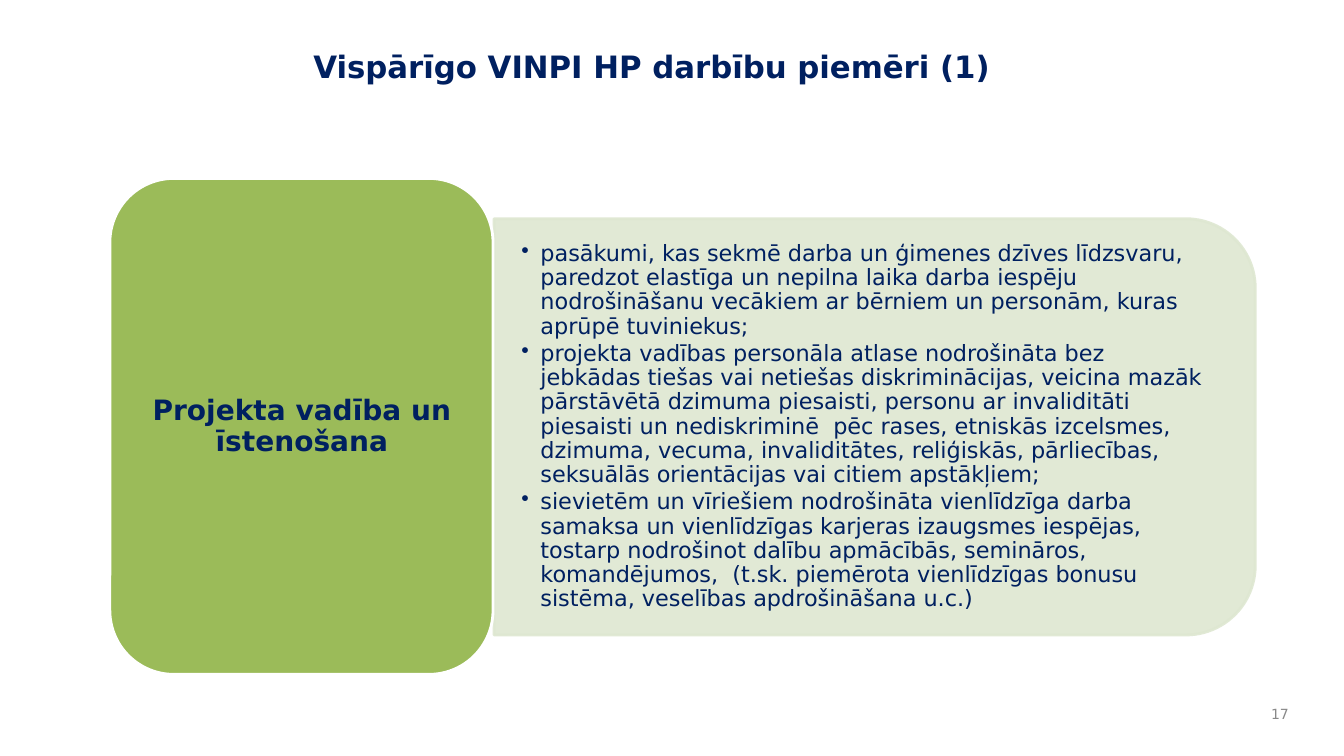
from pptx import Presentation
from pptx.dml.color import RGBColor
from pptx.enum.shapes import MSO_SHAPE
from pptx.enum.text import MSO_ANCHOR, PP_ALIGN
from pptx.oxml.ns import qn
from pptx.util import Inches, Pt
from lxml import etree

NAVY = RGBColor(0x00, 0x20, 0x60)
GREEN = RGBColor(0x9B, 0xBB, 0x59)
PALE = RGBColor(0xDE, 0xE7, 0xD1)
WHITE = RGBColor(0xFF, 0xFF, 0xFF)
GREY = RGBColor(0x89, 0x89, 0x89)

POINTS = [
    "pasākumi, kas sekmē darba un ģimenes dzīves līdzsvaru, paredzot elastīga "
    "un nepilna laika darba iespēju nodrošināšanu vecākiem ar bērniem un "
    "personām, kuras aprūpē tuviniekus;",
    "projekta vadības personāla atlase nodrošināta bez jebkādas tiešas vai "
    "netiešas diskriminācijas, veicina mazāk pārstāvētā dzimuma piesaisti, "
    "personu ar invaliditāti piesaisti un nediskriminē  pēc rases, etniskās "
    "izcelsmes, dzimuma, vecuma, invaliditātes, reliģiskās, pārliecības,  "
    "seksuālās orientācijas vai citiem apstākļiem;",
    "sievietēm un vīriešiem nodrošināta vienlīdzīga darba samaksa un "
    "vienlīdzīgas karjeras izaugsmes iespējas, tostarp nodrošinot dalību "
    "apmācībās, semināros, komandējumos,  (t.sk. piemērota vienlīdzīgas "
    "bonusu sistēma, veselības apdrošināšana u.c.)",
]

deck = Presentation()
deck.slide_width, deck.slide_height = Inches(13.33), Inches(7.5)
slide = deck.slides.add_slide(deck.slide_layouts[6])


def add_block(kind, box, fill, line):
    shape = slide.shapes.add_shape(kind, *map(Inches, box))
    shape.shadow.inherit = False
    shape.fill.solid()
    shape.fill.fore_color.rgb = fill
    shape.line.color.rgb = line
    shape.line.width = Pt(2)
    return shape


def add_text(box, lines, size, color=NAVY, bold=False, align=PP_ALIGN.LEFT,
             anchor=MSO_ANCHOR.MIDDLE, inset=(0.1, 0.05)):
    """Add a text box and return its paragraphs."""
    frame = slide.shapes.add_textbox(*map(Inches, box)).text_frame
    frame.word_wrap = True
    frame.vertical_anchor = anchor
    frame.margin_left = frame.margin_right = Inches(inset[0])
    frame.margin_top = frame.margin_bottom = Inches(inset[1])
    frame.text = "\n".join(lines)
    for para in frame.paragraphs:
        para.alignment = align
        font = para.font
        font.name, font.size, font.bold = "DejaVu Sans", Pt(size), bold
        font.color.rgb = color
    return frame.paragraphs


add_text((3.01, 0.42, 9.65, 1.13), ["Vispārīgo VINPI HP darbību piemēri (1)"],
         22, bold=True, anchor=MSO_ANCHOR.TOP)

panel = add_block(MSO_SHAPE.ROUND_2_SAME_RECTANGLE, (6.61, 0.46, 4.13, 7.55),
                  PALE, PALE)
panel.rotation = 90
for tint in panel.element.spPr.iter(qn("a:srgbClr")):
    etree.SubElement(tint, qn("a:alpha"), val="90000")

points = add_text((4.9, 2.37, 7.35, 3.73), POINTS, 16, inset=(0.27, 0.14))
for para in points:
    para.line_spacing = 0.9
    para.space_after = Pt(2.4)
    props = para._p.get_or_add_pPr()
    props.set("marL", str(Inches(0.19)))
    props.set("indent", str(-Inches(0.19)))
    bullet = etree.Element(qn("a:buChar"), char="•")
    props.find(qn("a:defRPr")).addprevious(bullet)

add_block(MSO_SHAPE.ROUNDED_RECTANGLE, (1.09, 1.77, 3.8, 4.92), GREEN, WHITE)
label = add_text((1.28, 1.96, 3.43, 4.55), ["Projekta vadība un īstenošana"],
                 20, bold=True, align=PP_ALIGN.CENTER, inset=(0.08, 0.04))
label[0].line_spacing = 0.9

add_text((12.44, 6.92, 0.44, 0.33), ["17"], 10, GREY, align=PP_ALIGN.RIGHT)

deck.save("out.pptx")
